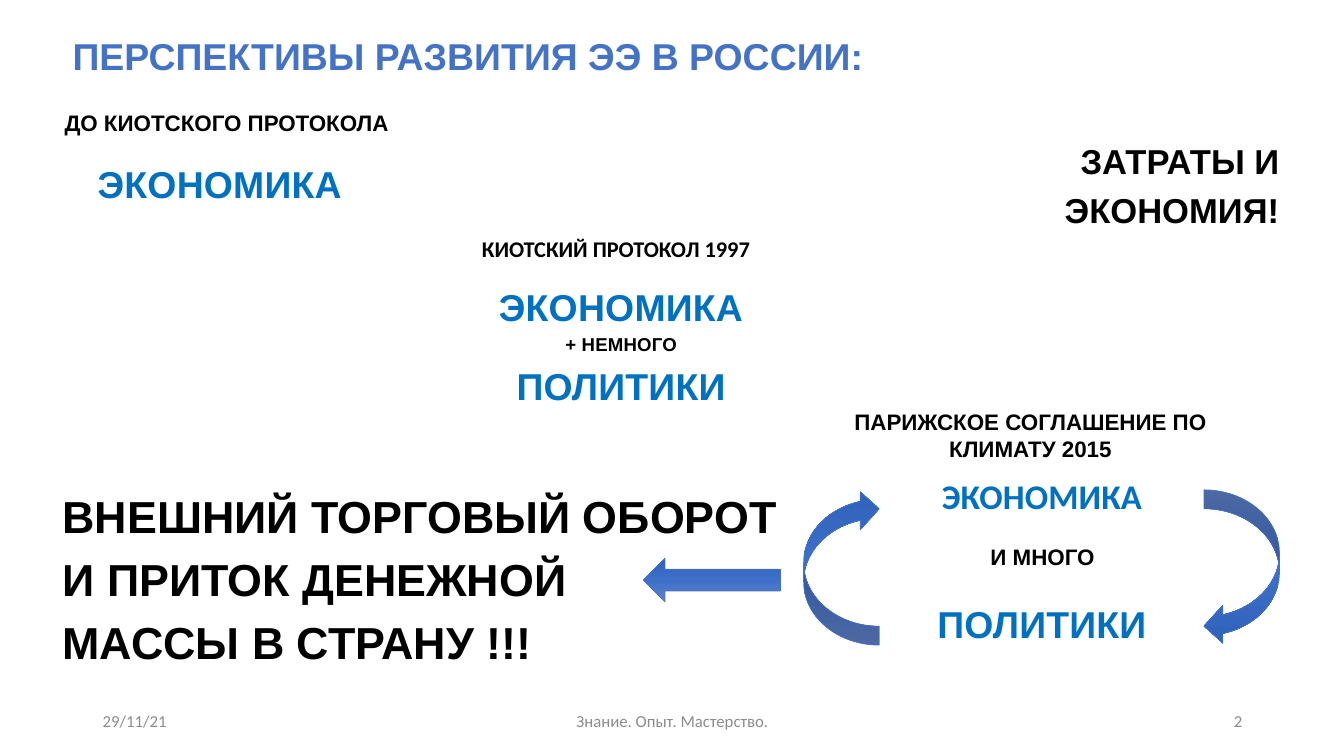
import copy
from dataclasses import dataclass

import pptx
import pptx.util
import pptx.dml.color
import pptx.enum.shapes
import pptx.enum.text
import pptx.oxml.ns

ALIGN = pptx.enum.text.PP_ALIGN
ANCHOR = pptx.enum.text.MSO_ANCHOR
SHAPES = pptx.enum.shapes.MSO_SHAPE
PX = 9144  # 100 px to the inch


@dataclass(frozen=True)
class Theme:
    head: str = "Arial"
    body: str = "Calibri"
    black: str = "000000"
    blue: str = "0070C0"
    accent: str = "4472C4"
    grey: str = "8C8C8C"
    gradient: tuple = ((0, "6183CB"), (0.5, "3E70CA"), (1, "3062BB"))
    huge: float = 32
    large: float = 26.7
    medium: float = 24.7
    label: float = 16
    small: float = 13.3
    footer: float = 12


THEME = Theme()
LABEL = dict(size=THEME.label)
KEYWORD = dict(size=THEME.large, color=THEME.blue, tracking=10)


def emu(*lengths):
    return [pptx.util.Emu(length * PX) for length in lengths]


def rgb(color):
    return pptx.dml.color.RGBColor.from_string(color)


def set_all(target, values):
    for name, value in values.items():
        setattr(target, name, value)


def write_span(para, text, size, color=THEME.black, font=THEME.head, bold=True, tracking=0):
    span = para.add_run()
    span.text = text
    set_all(span.font, dict(name=font, size=pptx.util.Pt(size), bold=bold))
    span.font.color.rgb = rgb(color)
    if tracking:
        span.font._element.set("spc", str(tracking))


def space_before(para, percent):
    properties = para._p.get_or_add_pPr()
    para.space_before = pptx.util.Pt(0)
    spacing = properties.find(pptx.oxml.ns.qn("a:spcBef"))
    spacing.remove(spacing[0])
    share = spacing.makeelement(pptx.oxml.ns.qn("a:spcPct"), {"val": str(percent * 1000)})
    spacing.append(share)


def add_text(page, box, lines, align=ALIGN.CENTER, margins=(0, 0), anchor=ANCHOR.TOP,
             line_spacing=None):
    """Each line is a text and its format."""
    frame = page.shapes.add_textbox(*emu(*box)).text_frame
    side, edge = emu(*margins)
    set_all(frame, dict(word_wrap=True, vertical_anchor=anchor, margin_left=side,
                        margin_right=side, margin_top=edge, margin_bottom=edge))
    for index, (text, style) in enumerate(lines):
        para = frame.add_paragraph() if index else frame.paragraphs[0]
        set_all(para, dict(alignment=align, line_spacing=line_spacing))
        if anchor == ANCHOR.TOP:
            space_before(para, 20)
        write_span(para, text, **style)


def add_arrow(page, kind, box, rotation=0):
    arrow = page.shapes.add_shape(kind, *emu(*box))
    arrow.rotation = rotation
    arrow.shadow.inherit = False
    arrow.line.color.rgb = rgb(THEME.accent)
    arrow.line.width = pptx.util.Pt(0.5)
    arrow.fill.gradient()
    arrow.fill.gradient_angle = 270
    stops = arrow._element.spPr.find(".//" + pptx.oxml.ns.qn("a:gsLst"))
    stops.append(copy.deepcopy(stops[-1]))
    for stop, (position, color) in zip(arrow.fill.gradient_stops, THEME.gradient):
        stop.position = position
        stop.color.rgb = rgb(color)


def place_title(page, box):
    title = page.shapes.title
    set_all(title, dict(zip(("left", "top", "width", "height"), emu(*box))))
    set_all(title.text_frame, dict(word_wrap=True, vertical_anchor=ANCHOR.MIDDLE,
                                   auto_size=pptx.enum.text.MSO_AUTO_SIZE.NONE))
    para = title.text_frame.paragraphs[0]
    set_all(para, dict(alignment=ALIGN.LEFT, line_spacing=0.9))
    write_span(para, "ПЕРСПЕКТИВЫ РАЗВИТИЯ ЭЭ В РОССИИ:", THEME.large, THEME.accent)


def before_kyoto(page, box):
    left, top, width, height = box
    add_text(page, (left + 2, top, width, 50), [("ДО КИОТСКОГО ПРОТОКОЛА", LABEL)], ALIGN.LEFT)
    add_text(page, (left, top + 52, 312, height - 52), [("ЭКОНОМИКА", KEYWORD)])


def kyoto(page, box):
    left, top, width, height = box
    add_text(page, (left, top, width, 50),
             [("КИОТСКИЙ ПРОТОКОЛ 1997", dict(LABEL, font=THEME.body))],
             margins=(10, 5), line_spacing=0.9)
    add_text(page, (left + 45, top + 51, 312, height - 51),
             [("ЭКОНОМИКА", KEYWORD),
              ("+ НЕМНОГО", dict(size=THEME.small, tracking=10)),
              ("ПОЛИТИКИ", KEYWORD)])


def paris(page, box):
    """Agreement: a cycle of two words between curved arrows."""
    left, top, width, height = box
    add_text(page, (left + 29, top, 392, 50),
             [("ПАРИЖСКОЕ СОГЛАШЕНИЕ ПО КЛИМАТУ 2015", LABEL)])
    add_text(page, (left + 105, top + 69, 263, 45),
             [("ЭКОНОМИКА", dict(KEYWORD, size=THEME.medium, font=THEME.body))],
             margins=(10, 5), line_spacing=0.8)
    add_text(page, (left + 76, top + 134, 322, 50), [("И МНОГО", LABEL)])
    add_text(page, (left + 105, top + 191, 263, 45), [("ПОЛИТИКИ", KEYWORD)])
    for arrow_left, rotation in ((left, 180), (left + width - 75, 0)):
        add_arrow(page, SHAPES.CURVED_LEFT_ARROW,
                  (arrow_left, top + height - 154, 75, 154), rotation)


def costs(page, box):
    style = dict(size=THEME.medium)
    add_text(page, box, [("ЗАТРАТЫ И", style), ("ЭКОНОМИЯ!", style)], ALIGN.RIGHT)


def trade(page, box):
    left, top, width, height = box
    lines = ("ВНЕШНИЙ ТОРГОВЫЙ ОБОРОТ", "И ПРИТОК ДЕНЕЖНОЙ", "МАССЫ В СТРАНУ !!!")
    add_text(page, box, [(line, dict(size=THEME.huge)) for line in lines], ALIGN.LEFT)
    add_arrow(page, SHAPES.RIGHT_ARROW, (left + 576, top + 69, 136, 43), 180)


def footer(page, box):
    left, top, width, height = box
    style = dict(size=THEME.footer, color=THEME.grey, font=THEME.body, bold=False)
    parts = (("29/11/21", 0, 300, ALIGN.LEFT),
             ("Знание. Опыт. Мастерство.", 350, 450, ALIGN.CENTER),
             ("2", width - 300, 300, ALIGN.RIGHT))
    for text, offset, part_width, align in parts:
        add_text(page, (left + offset, top, part_width, height), [(text, style)],
                 align, (10, 5), ANCHOR.MIDDLE)


def main():
    deck = pptx.Presentation()
    deck.slide_width, deck.slide_height = emu(1333, 750)
    page = deck.slides.add_slide(deck.slide_layouts[5])
    place_title(page, (62, 25, 1176, 65))
    before_kyoto(page, (62, 108, 381, 97))
    costs(page, (888, 139, 381, 85))
    kyoto(page, (415, 231, 392, 183))
    paris(page, (797, 405, 472, 235))
    trade(page, (62, 485, 734, 190))
    footer(page, (92, 695, 1150, 40))
    deck.save("out.pptx")


if __name__ == "__main__":
    main()
